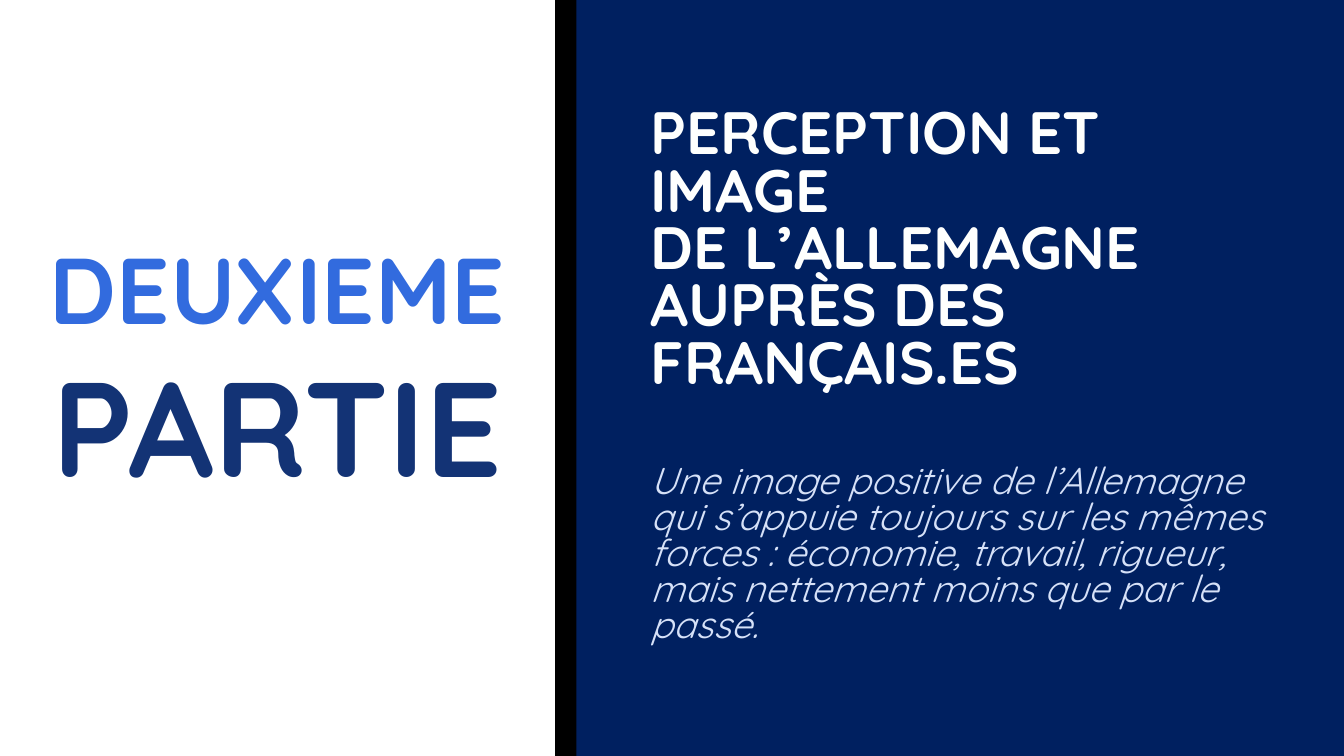
"""Build the section slide that opens the second part."""
from dataclasses import dataclass

from pptx import Presentation
from pptx.dml.color import RGBColor
from pptx.enum.shapes import MSO_SHAPE
from pptx.enum.text import MSO_ANCHOR, PP_ALIGN
from pptx.util import Inches, Pt

RECTANGLE = MSO_SHAPE.RECTANGLE
TOP = MSO_ANCHOR.TOP
LEFT, CENTER = PP_ALIGN.LEFT, PP_ALIGN.CENTER
FONT = "Quicksand"
WIDTH = 10
HEIGHT = WIDTH * 9 / 16
TEXT_LEFT, TEXT_WIDTH = 4.84, 4.63
TIGHT = 0.8


@dataclass(frozen=True)
class Band:
    left: float
    width: float
    color: str


@dataclass(frozen=True)
class Line:
    text: str
    size: float
    color: str
    bold: bool = True
    italic: bool = False


BANDS = [Band(4.28, WIDTH - 4.28, "002060"), Band(4.13, 0.16, "000000")]
PART_LABEL = [Line("DEUXIEME", 50, "326BDE"), Line("PARTIE", 72, "133375")]
HEADING = [
    Line("PERCEPTION ET IMAGE\vDE L’ALLEMAGNE AUPRÈS DES FRANÇAIS.ES", 32, "FEFFFE")
]
SUMMARY = [
    Line(text, 20, "D6E1F8", bold=False, italic=True)
    for text in (
        "Une image positive de l’Allemagne qui s’appuie toujours sur les mêmes "
        "forces : économie, travail, rigueur,",
        "mais nettement moins que par le passé.",
    )
]


def rgb(color: str) -> RGBColor:
    """Turn a hex string into a colour."""
    return RGBColor.from_string(color)


def draw_band(slide, band: Band) -> None:
    """Draw a full-height vertical band."""
    shape = slide.shapes.add_shape(
        RECTANGLE, Inches(band.left), 0, Inches(band.width), Inches(HEIGHT)
    )
    shape.shadow.inherit = False
    shape.fill.solid()
    shape.fill.fore_color.rgb = rgb(band.color)
    shape.line.fill.background()


def write_lines(frame, lines: list[Line], align: PP_ALIGN, spacing: float) -> None:
    """Fill a text frame with one paragraph per line."""
    frame.word_wrap = True
    frame.vertical_anchor = TOP
    frame.margin_left = frame.margin_right = 0
    frame.margin_top = frame.margin_bottom = 0
    for index, line in enumerate(lines):
        paragraph = frame.add_paragraph() if index else frame.paragraphs[0]
        paragraph.text = line.text
        paragraph.alignment = align
        paragraph.line_spacing = spacing
        font = paragraph.font
        font.name, font.size = FONT, Pt(line.size)
        font.bold, font.italic = line.bold, line.italic
        font.color.rgb = rgb(line.color)


def main() -> None:
    """Build and save the slide."""
    deck = Presentation()
    deck.slide_width, deck.slide_height = Inches(WIDTH), Inches(HEIGHT)
    slide = deck.slides.add_slide(deck.slide_layouts[5])
    for band in BANDS:
        draw_band(slide, band)

    heading = slide.shapes.title
    heading.left, heading.top = Inches(TEXT_LEFT), Inches(0.81)
    heading.width, heading.height = Inches(TEXT_WIDTH), Inches(2.2)
    slide.shapes._spTree.append(heading._element)
    write_lines(heading.text_frame, HEADING, LEFT, TIGHT)

    part_label = slide.shapes.add_textbox(
        Inches(0.27), Inches(1.72), Inches(3.59), Inches(2.15)
    )
    write_lines(part_label.text_frame, PART_LABEL, CENTER, 1)

    summary = slide.shapes.add_textbox(
        Inches(TEXT_LEFT), Inches(3.47), Inches(TEXT_WIDTH), Inches(1.4)
    )
    write_lines(summary.text_frame, SUMMARY, LEFT, TIGHT)

    deck.save("out.pptx")


if __name__ == "__main__":
    main()
